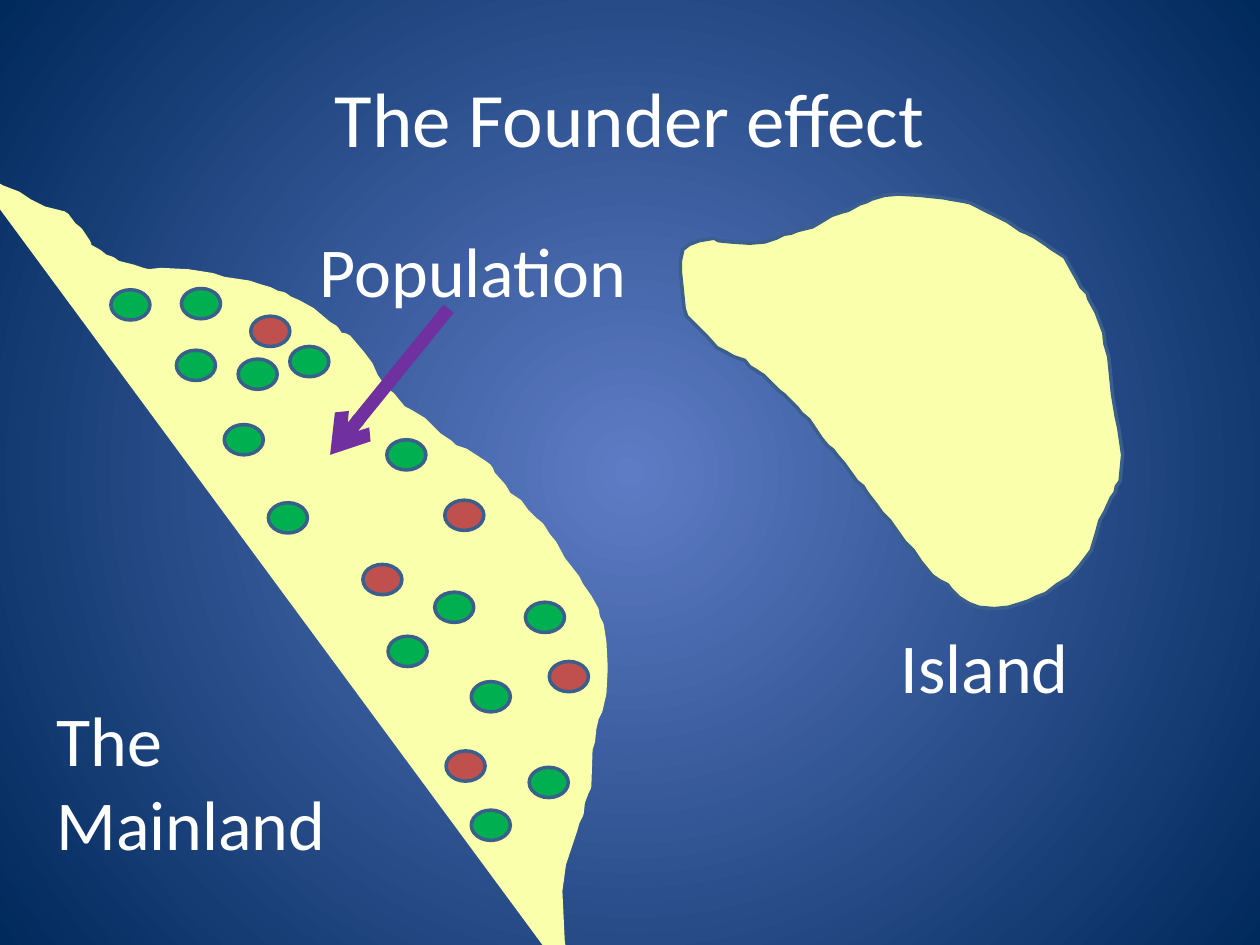
from dataclasses import dataclass

import pptx
import pptx.dml.color
import pptx.enum.shapes
import pptx.enum.text
import pptx.oxml
import pptx.oxml.ns
import pptx.shapes.autoshape
import pptx.slide
import pptx.text.text
import pptx.util
from pptx.dml.color import RGBColor
from pptx.util import Inches

WHITE = RGBColor(0xFF, 0xFF, 0xFF)
GLOW = RGBColor(0x5E, 0x7C, 0xC5)
NAVY = RGBColor(0x00, 0x29, 0x5C)
SAND = RGBColor(0xF9, 0xFF, 0xAB)
OUTLINE = RGBColor(0x3A, 0x5F, 0x8C)
GREEN = RGBColor(0x00, 0xB0, 0x50)
RED = RGBColor(0xC0, 0x50, 0x4D)
PURPLE = RGBColor(0x70, 0x30, 0xA0)
FONT = "Calibri"
UNITS_PER_INCH = 100
DOT_WIDTH, DOT_HEIGHT = 0.31, 0.24

Point = tuple[float, float]


@dataclass(frozen=True)
class Label:
    text: str
    left: float
    top: float
    width: float
    height: float


@dataclass(frozen=True)
class Land:
    coast: list[Point]
    closed: bool
    line_color: RGBColor
    line_width: float


@dataclass(frozen=True)
class Group:
    color: RGBColor
    corners: list[Point]


MAINLAND = Land([
    (-0.2, 1.39), (-0.12, 1.43), (-0.09, 1.48), (-0.05, 1.49), (0, 1.52),
    (0.13, 1.57), (0.22, 1.63), (0.34, 1.69), (0.5, 1.73), (0.56, 1.81),
    (0.61, 1.85), (0.67, 1.94), (0.68, 1.98), (0.77, 2.03), (0.82, 2.07),
    (0.88, 2.09), (0.92, 2.12), (1.04, 2.15), (1.13, 2.18), (1.18, 2.19),
    (1.28, 2.18), (1.49, 2.19), (1.68, 2.22), (1.77, 2.25), (1.97, 2.28),
    (2.06, 2.31), (2.13, 2.33), (2.19, 2.36), (2.24, 2.37), (2.28, 2.4),
    (2.35, 2.43), (2.46, 2.49), (2.59, 2.6), (2.64, 2.63), (2.68, 2.69),
    (2.74, 2.7), (2.85, 2.83), (2.91, 2.91), (2.95, 3), (3.03, 3.12),
    (3.09, 3.16), (3.13, 3.21), (3.18, 3.27), (3.24, 3.3), (3.34, 3.36),
    (3.41, 3.43), (3.46, 3.48), (3.55, 3.54), (3.59, 3.58), (3.68, 3.61),
    (3.82, 3.7), (3.86, 3.73), (3.88, 3.78), (3.97, 3.88), (4.01, 3.95),
    (4.1, 4.01), (4.15, 4.08), (4.22, 4.15), (4.27, 4.19), (4.32, 4.27),
    (4.37, 4.33), (4.44, 4.46), (4.55, 4.6), (4.58, 4.66), (4.65, 4.76),
    (4.7, 4.85), (4.71, 4.91), (4.74, 4.97), (4.76, 5.1), (4.77, 5.3),
    (4.76, 5.5), (4.73, 5.63), (4.7, 5.69), (4.68, 5.78), (4.67, 5.88),
    (4.65, 5.94), (4.64, 6.24), (4.62, 6.28), (4.59, 6.36), (4.58, 6.45),
    (4.55, 6.51), (4.53, 6.58), (4.49, 6.7), (4.47, 6.76), (4.44, 6.85),
    (4.41, 7.07), (4.43, 7.49), (4.47, 7.64), (4.52, 7.79),
], False, SAND, 7.75)

ISLAND = Land([
    (5.7, 1.91), (5.8, 1.92), (5.95, 1.93), (6.07, 1.92), (6.16, 1.89),
    (6.22, 1.86), (6.28, 1.85), (6.33, 1.83), (6.45, 1.8), (6.55, 1.74),
    (6.6, 1.71), (6.69, 1.68), (6.73, 1.67), (6.82, 1.62), (6.88, 1.6),
    (6.92, 1.58), (7.02, 1.55), (7.13, 1.54), (7.3, 1.55), (7.49, 1.57),
    (7.54, 1.58), (7.66, 1.6), (7.7, 1.61), (7.82, 1.67), (7.94, 1.73),
    (8, 1.76), (8.1, 1.83), (8.15, 1.85), (8.21, 1.88), (8.3, 1.94),
    (8.34, 1.97), (8.45, 2.04), (8.51, 2.15), (8.55, 2.22), (8.58, 2.28),
    (8.63, 2.33), (8.64, 2.37), (8.7, 2.48), (8.76, 2.64), (8.77, 2.73),
    (8.8, 2.83), (8.83, 3.13), (8.85, 3.25), (8.86, 3.31), (8.88, 3.4),
    (8.91, 3.61), (8.89, 3.82), (8.86, 3.86), (8.85, 3.91), (8.82, 3.95),
    (8.77, 4.06), (8.73, 4.13), (8.7, 4.24), (8.66, 4.37), (8.57, 4.49),
    (8.49, 4.58), (8.39, 4.64), (8.3, 4.71), (8.22, 4.74), (8.16, 4.77),
    (8.1, 4.79), (8, 4.82), (7.89, 4.83), (7.77, 4.82), (7.69, 4.79),
    (7.61, 4.74), (7.55, 4.68), (7.52, 4.64), (7.46, 4.61), (7.4, 4.57),
    (7.31, 4.46), (7.25, 4.37), (7.18, 4.3), (7.06, 4.13), (7, 4.07),
    (6.95, 4), (6.88, 3.91), (6.85, 3.86), (6.8, 3.82), (6.7, 3.68),
    (6.64, 3.61), (6.61, 3.57), (6.57, 3.54), (6.52, 3.48), (6.46, 3.39),
    (6.42, 3.33), (6.36, 3.28), (6.33, 3.24), (6.22, 3.13), (6.18, 3.1),
    (6.06, 2.98), (6, 2.94), (5.95, 2.91), (5.91, 2.86), (5.82, 2.83),
    (5.77, 2.8), (5.69, 2.76), (5.61, 2.67), (5.52, 2.58), (5.45, 2.51),
    (5.43, 2.45), (5.4, 2.16), (5.4, 2.07), (5.42, 1.98), (5.47, 1.94),
    (5.55, 1.91), (5.67, 1.89),
], True, OUTLINE, 2)

LABELS = [
    Label("The Mainland", 0.35, 5.48, 2.44, 1.45),
    Label("Island", 7.05, 4.9, 2.44, 0.77),
    Label("Population", 2.44, 1.76, 2.75, 0.77),
]

POPULATION = [
    Group(GREEN, [
        (0.88, 2.3), (1.44, 2.29), (1.4, 2.78), (1.89, 2.85), (1.78, 3.37),
        (2.3, 2.75), (2.13, 3.99), (3.07, 3.49), (3.74, 5.41), (3.45, 4.7),
        (3.08, 5.05), (4.17, 4.78), (4.2, 6.09), (3.74, 6.43),
    ]),
    Group(RED, [
        (3.53, 3.97), (2.88, 4.48), (4.36, 5.25), (1.99, 2.51), (3.54, 5.96),
    ]),
]


def paint_background(page: pptx.slide.Slide) -> None:
    fill = page.background.fill
    fill.gradient()
    for stop, color in zip(fill.gradient_stops, (GLOW, NAVY)):
        stop.color.rgb = color
    gradient = next(page.element.iter(pptx.oxml.ns.qn("a:gradFill")))
    linear = gradient.find(pptx.oxml.ns.qn("a:lin"))
    radial = pptx.oxml.parse_xml(
        f'<a:path {pptx.oxml.ns.nsdecls("a")} path="circle">'
        '<a:fillToRect l="50000" t="50000" r="50000" b="50000"/></a:path>'
    )
    gradient.replace(linear, radial)


def style_text(frame: pptx.text.text.TextFrame, text: str, size: float) -> None:
    frame.text = text
    frame.word_wrap = True
    for span in frame.paragraphs[0].runs:
        span.font.name = FONT
        span.font.size = pptx.util.Pt(size)
        span.font.color.rgb = WHITE


def add_title(page: pptx.slide.Slide, text: str) -> None:
    title = page.shapes.title
    title.left, title.top = Inches(0.5), Inches(0.3)
    title.width, title.height = Inches(9), Inches(1.25)
    style_text(title.text_frame, text, 44)
    title.text_frame.vertical_anchor = pptx.enum.text.MSO_ANCHOR.MIDDLE
    title.text_frame.paragraphs[0].alignment = pptx.enum.text.PP_ALIGN.CENTER


def style_shape(shape: pptx.shapes.autoshape.Shape, fill: RGBColor,
                line: RGBColor, width: float) -> None:
    shape.shadow.inherit = False
    shape.fill.solid()
    shape.fill.fore_color.rgb = fill
    shape.line.color.rgb = line
    shape.line.width = pptx.util.Pt(width)


def add_land(page: pptx.slide.Slide, land: Land) -> None:
    start, *rest = [
        (round(x * UNITS_PER_INCH), round(y * UNITS_PER_INCH)) for x, y in land.coast
    ]
    builder = page.shapes.build_freeform(*start, scale=Inches(1) / UNITS_PER_INCH)
    builder.add_line_segments(rest, close=land.closed)
    style_shape(builder.convert_to_shape(), SAND, land.line_color, land.line_width)


def add_label(page: pptx.slide.Slide, label: Label) -> None:
    box = page.shapes.add_textbox(
        Inches(label.left), Inches(label.top), Inches(label.width), Inches(label.height))
    style_text(box.text_frame, label.text, 40)
    box.text_frame.auto_size = pptx.enum.text.MSO_AUTO_SIZE.SHAPE_TO_FIT_TEXT


def add_group(page: pptx.slide.Slide, group: Group) -> None:
    for left, top in group.corners:
        dot = page.shapes.add_shape(
            pptx.enum.shapes.MSO_SHAPE.OVAL, Inches(left), Inches(top),
            Inches(DOT_WIDTH), Inches(DOT_HEIGHT))
        style_shape(dot, group.color, OUTLINE, 2)


def add_arrow(page: pptx.slide.Slide, start: Point, end: Point) -> None:
    arrow = page.shapes.add_connector(
        pptx.enum.shapes.MSO_CONNECTOR.STRAIGHT, *map(Inches, start + end))
    arrow.line.color.rgb = PURPLE
    arrow.line.width = pptx.util.Pt(7.5)
    namespace = pptx.oxml.ns.nsdecls("a")
    arrow.line._get_or_add_ln().append(
        pptx.oxml.parse_xml(f'<a:tailEnd {namespace} type="arrow"/>'))
    arrow.element.spPr.append(pptx.oxml.parse_xml(f"<a:effectLst {namespace}/>"))


def main() -> None:
    deck = pptx.Presentation()
    deck.slide_width, deck.slide_height = Inches(10), Inches(7.5)
    page = deck.slides.add_slide(deck.slide_layouts.get_by_name("Title Only"))
    paint_background(page)
    add_title(page, "The Founder effect")
    for land in (MAINLAND, ISLAND):
        add_land(page, land)
    for label in LABELS:
        add_label(page, label)
    for group in POPULATION:
        add_group(page, group)
    add_arrow(page, (3.56, 2.45), (2.62, 3.61))
    deck.save("out.pptx")


if __name__ == "__main__":
    main()
